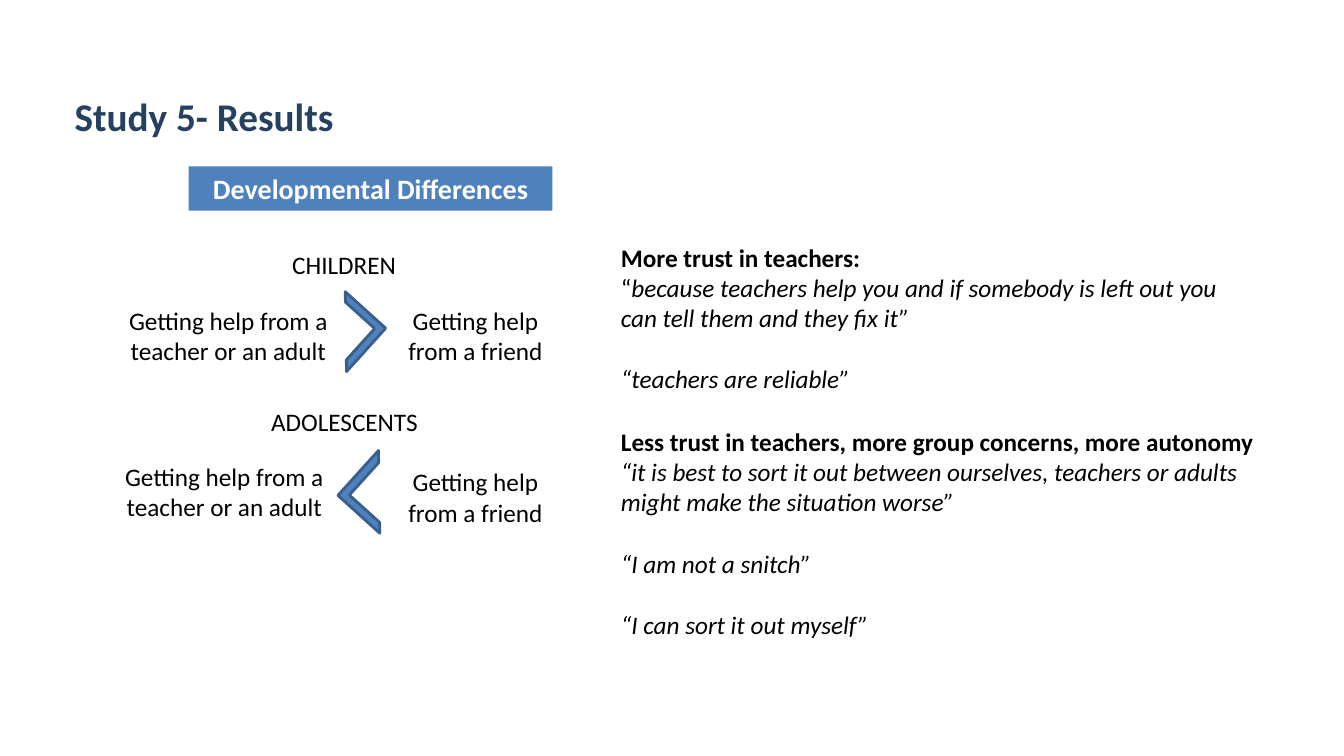
import pptx
import pptx.util
import pptx.dml.color
import pptx.enum.shapes
import pptx.enum.text

Pt = pptx.util.Pt
RGB = pptx.dml.color.RGBColor
SHAPE = pptx.enum.shapes.MSO_SHAPE
ANCHOR = pptx.enum.text.MSO_ANCHOR
FIT = pptx.enum.text.MSO_AUTO_SIZE
LEFT = pptx.enum.text.PP_ALIGN.LEFT
MID = pptx.enum.text.PP_ALIGN.CENTER

NAVY = RGB(0x25, 0x40, 0x61)
BLUE = RGB(0x4F, 0x81, 0xBD)
EDGE = RGB(0x3A, 0x5F, 0x8C)
WHITE = RGB(0xFF, 0xFF, 0xFF)
BLACK = RGB(0, 0, 0)
FONT = "Calibri"
GAP = Pt(22)

# Boxes are left, top, width, height in percent of the slide.
TITLE = ("Study 5- Results", (4.8, 10.27, 90.5, 8.8))
BANNER = ("Developmental Differences", (14.03, 22, 27.08, 5.87))
ADULT = "Getting help from a teacher or an adult"
FRIEND = "Getting help from a friend"
GROUPS = [
    {"name": "CHILDREN", "head": (21, 32.27, 9.3, 5.33),
     "adult": (8.7, 39.73), "friend": (28.88, 39.73),
     "sign": (23.56, 40.27, 4.35, 7.2), "turn": 132.1},
    {"name": "ADOLESCENTS", "head": (19.43, 53.07, 12.53, 5.33),
     "adult": (8.4, 60.4), "friend": (28.88, 61.07),
     "sign": (25.96, 61.33, 4.5, 7.47), "turn": 312.1},
]
ADULT_SIZE = (16.58, 9.47)
FRIEND_SIZE = (12.98, 9.47)

# Each quote is its upright part, then its italic part.
QUOTES = [
    ("More trust in teachers:", (45.46, 31.33, 48.61, 21.6), [
        ("“", "because teachers help you and if somebody is left out you "
              "can tell them and they fix it”"),
        ("", "“teachers are reliable”")]),
    ("Less trust in teachers, more group concerns, more autonomy",
     (45.46, 55.73, 48.61, 29.6), [
        ("", "“it is best to sort it out between ourselves, teachers or "
             "adults might make the situation worse”"),
        ("", "“I am not a snitch”"),
        ("", "“I can sort it out myself”")]),
]

deck = pptx.Presentation()
deck.slide_width = pptx.util.Inches(13.33)
deck.slide_height = pptx.util.Inches(7.5)
slide = deck.slides.add_slide(deck.slide_layouts[5])


def scale(box):
    """Turn percents of the slide into lengths."""
    sides = (deck.slide_width, deck.slide_height) * 2
    return [round(part * side / 100) for part, side in zip(box, sides)]


def style(run, size=18, color=BLACK, bold=False, italic=False):
    font = run.font
    font.name, font.size, font.bold, font.italic = FONT, Pt(size), bold, italic
    font.color.rgb = color


def write(frame, text, align, **look):
    frame.text = text
    para = frame.paragraphs[0]
    para.alignment = align
    style(para.runs[0], **look)


def add_box(box, wrap=True):
    frame = slide.shapes.add_textbox(*scale(box)).text_frame
    frame.word_wrap = wrap
    frame.auto_size = FIT.SHAPE_TO_FIT_TEXT
    return frame


def add_solid(kind, box):
    shape = slide.shapes.add_shape(kind, *scale(box))
    shape.shadow.inherit = False
    shape.fill.solid()
    shape.fill.fore_color.rgb = BLUE
    return shape


def add_title(text, box):
    title = slide.shapes.title
    title.left, title.top, title.width, title.height = scale(box)
    frame = title.text_frame
    frame.auto_size = FIT.NONE
    frame.vertical_anchor = ANCHOR.BOTTOM
    write(frame, text, LEFT, size=28, color=NAVY, bold=True)


def add_banner(text, box):
    shape = add_solid(SHAPE.RECTANGLE, box)
    shape.line.fill.background()
    frame = shape.text_frame
    frame.word_wrap = True
    frame.auto_size = FIT.SHAPE_TO_FIT_TEXT
    frame.vertical_anchor = ANCHOR.TOP
    write(frame, text, MID, size=20, color=WHITE, bold=True)


def add_group(group):
    write(add_box(group["head"], wrap=False), group["name"], LEFT)
    write(add_box(group["adult"] + ADULT_SIZE), ADULT, MID)
    write(add_box(group["friend"] + FRIEND_SIZE), FRIEND, MID)
    sign = add_solid(SHAPE.HALF_FRAME, group["sign"])
    sign.adjustments[0] = 0.147
    sign.adjustments[1] = 0.14
    sign.rotation = group["turn"]
    sign.line.color.rgb = EDGE
    sign.line.width = Pt(2)


def add_quotes(head, box, quotes):
    frame = add_box(box)
    write(frame, head, LEFT, bold=True)
    for rank, (plain, slant) in enumerate(quotes):
        para = frame.add_paragraph()
        if rank:
            para.space_before = GAP
        for text, italic in ((plain, False), (slant, True)):
            if text:
                run = para.add_run()
                run.text = text
                style(run, italic=italic)


add_title(*TITLE)
add_banner(*BANNER)
for group in GROUPS:
    add_group(group)
for block in QUOTES:
    add_quotes(*block)
deck.save("out.pptx")
